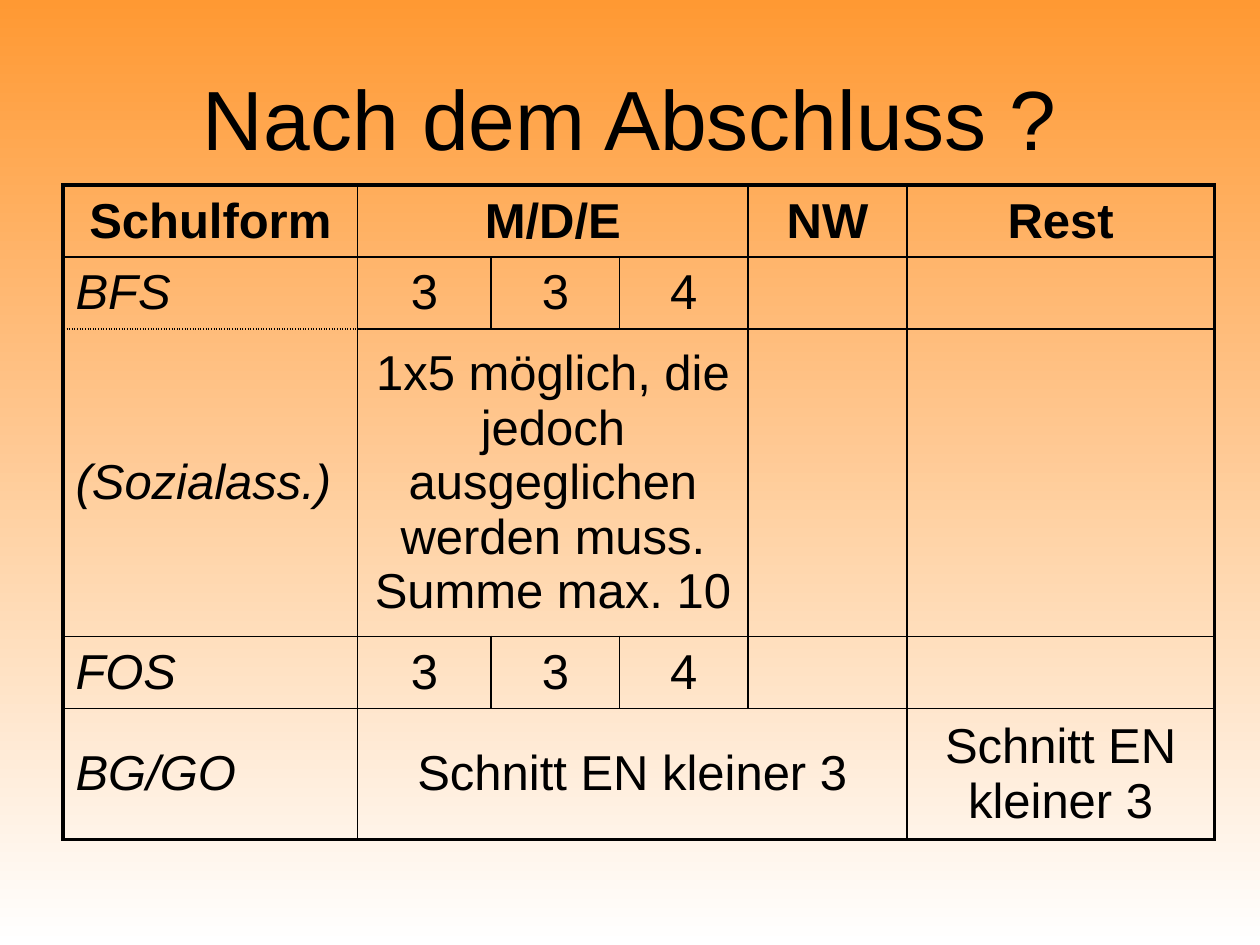
from lxml.etree import SubElement
from pptx import Presentation
from pptx.dml.color import RGBColor
from pptx.enum.text import MSO_ANCHOR as Anchor, PP_ALIGN as Align
from pptx.oxml.ns import qn
from pptx.util import Cm, Pt


def color(value):
    return RGBColor.from_string(value)


def write(frame, text, size=28, bold=False, italic=False, align=Align.CENTER):
    frame.word_wrap = True
    paragraph = frame.paragraphs[0]
    paragraph.alignment = align
    run = paragraph.add_run()
    run.text = text
    run.font.name = "Arial"
    run.font.size = Pt(size)
    run.font.bold = bold
    run.font.italic = italic
    run.font.color.rgb = color("000000")


presentation = Presentation()
presentation.slide_width = Cm(25.4)
presentation.slide_height = Cm(19.05)
slide = presentation.slides.add_slide(presentation.slide_layouts[6])

background = slide.background.fill
background.gradient()
background.gradient_angle = 270
for stop, value in zip(background.gradient_stops, ("FF9933", "FFFFFF")):
    stop.color.rgb = color(value)

title = slide.shapes.add_textbox(Cm(1.27), Cm(0.76), Cm(22.86), Cm(3.18))
title.text_frame.vertical_anchor = Anchor.MIDDLE
write(title.text_frame, "Nach dem Abschluss ?", size=48)

widths = [5.94, 2.69, 2.59, 2.59, 3.2, 6.2]
heights = [1.45, 1.45, 6.2, 1.45, 2.64]
rows = [
    ["Schulform", "M/D/E", "", "", "NW", "Rest"],
    ["BFS", "3", "3", "4", "", ""],
    ["(Sozialass.)", "1x5 möglich, die jedoch ausgeglichen werden muss. Summe max. 10",
     "", "", "", ""],
    ["FOS", "3", "3", "4", "", ""],
    ["BG/GO", "Schnitt EN kleiner 3", "", "", "", "Schnitt EN kleiner 3"],
]
last_row, last_column = len(rows) - 1, len(widths) - 1

table = slide.shapes.add_table(
    len(rows), len(widths), Cm(1.27), Cm(3.73), Cm(sum(widths)), Cm(sum(heights))
).table
table.first_row = False
table.horz_banding = False
for column, width in zip(table.columns, widths):
    column.width = Cm(width)
for row, height in zip(table.rows, heights):
    row.height = Cm(height)
for row_index, end in ((0, 3), (2, 3), (4, 4)):
    table.cell(row_index, 1).merge(table.cell(row_index, end))

for row_index, texts in enumerate(rows):
    for column_index, text in enumerate(texts):
        cell = table.cell(row_index, column_index)
        cell.vertical_anchor = Anchor.MIDDLE
        if text:
            label = column_index == 0 and row_index > 0
            write(cell.text_frame, text, bold=row_index == 0, italic=label,
                  align=Align.LEFT if label else Align.CENTER)

        outer_edges = {
            "lnL": column_index == 0,
            "lnR": column_index == last_column,
            "lnT": row_index == 0,
            "lnB": row_index == last_row,
        }
        properties = cell._tc.get_or_add_tcPr()
        for edge, outer in outer_edges.items():
            if cell.is_spanned and edge in ("lnL", "lnR"):
                continue
            line = SubElement(properties, qn("a:" + edge), w=str(Pt(2.25 if outer else 1)))
            fill = SubElement(line, qn("a:solidFill"))
            SubElement(fill, qn("a:srgbClr"), val="000000")
            dotted = (row_index, column_index, edge) in ((1, 0, "lnB"), (2, 0, "lnT"))
            SubElement(line, qn("a:prstDash"), val="sysDot" if dotted else "solid")
        cell.fill.background()

presentation.save("out.pptx")
